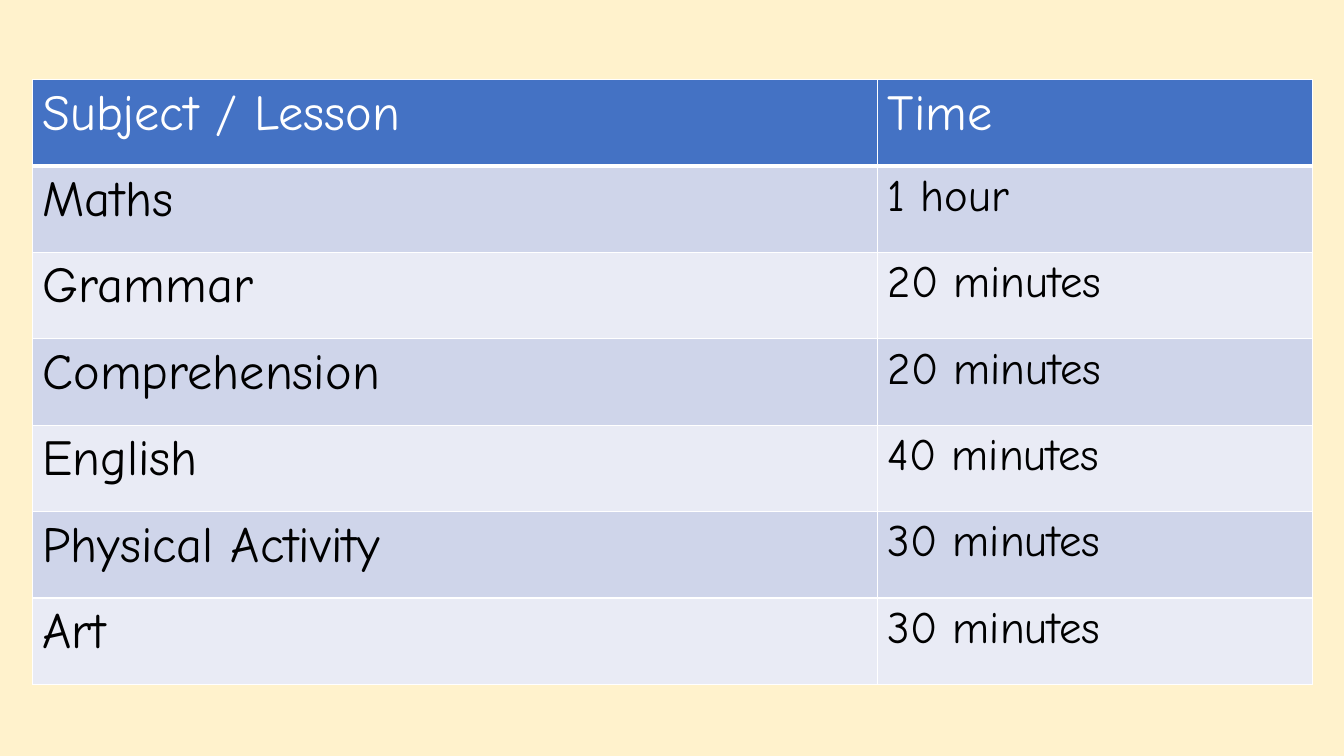
"""Build a timetable slide listing each lesson and its length."""
import pptx
import pptx.dml.color
import pptx.oxml.ns
import pptx.util
from lxml import etree

Pt = pptx.util.Pt
RGBColor = pptx.dml.color.RGBColor

CREAM = RGBColor(0xFF, 0xF2, 0xCC)
BLUE = RGBColor(0x44, 0x72, 0xC4)
DARK_BAND = RGBColor(0xCF, 0xD5, 0xEA)
LIGHT_BAND = RGBColor(0xE9, 0xEB, 0xF5)
WHITE = RGBColor(0xFF, 0xFF, 0xFF)
BLACK = RGBColor(0x00, 0x00, 0x00)

TIMETABLE = [
    ("Subject / Lesson", "Time"),
    ("Maths", "1 hour"),
    ("Grammar", "20 minutes"),
    ("Comprehension", "20 minutes"),
    ("English", "40 minutes"),
    ("Physical Activity", "30 minutes"),
    ("Art", "30 minutes"),
]


class SlideBuilder:
    def __init__(self, slide, font_name):
        self.slide = slide
        self.font_name = font_name

    def background(self, color):
        fill = self.slide.background.fill
        fill.solid()
        fill.fore_color.rgb = color

    def borders(self, cell, color, bottom_width):
        properties = cell._tc.get_or_add_tcPr()
        qualified = pptx.oxml.ns.qn
        for side, width in (("L", 1), ("R", 1), ("T", 1), ("B", bottom_width)):
            line = etree.SubElement(properties, qualified(f"a:ln{side}"), w=str(Pt(width)))
            fill = etree.SubElement(line, qualified("a:solidFill"))
            etree.SubElement(fill, qualified("a:srgbClr"), val=str(color))

    def cell(self, cell, text, size, text_color, fill_color, bottom_width):
        self.borders(cell, WHITE, bottom_width)
        cell.fill.solid()
        cell.fill.fore_color.rgb = fill_color
        cell.text_frame.text = text
        font = cell.text_frame.paragraphs[0].runs[0].font
        font.name = self.font_name
        font.size = Pt(size)
        font.bold = False
        font.color.rgb = text_color

    def table(self, rows, left, top, column_widths, height):
        frame = self.slide.shapes.add_table(
            len(rows), len(column_widths),
            Pt(left), Pt(top), Pt(sum(column_widths)), Pt(height))
        table = frame.table
        for column, width in zip(table.columns, column_widths):
            column.width = Pt(width)
        for row_index, texts in enumerate(rows):
            table.rows[row_index].height = Pt(height / len(rows))
            is_header = row_index == 0
            band = DARK_BAND if row_index % 2 else LIGHT_BAND
            for column_index, text in enumerate(texts):
                self.cell(
                    table.cell(row_index, column_index), text,
                    size=36 if is_header or column_index == 0 else 32,
                    text_color=WHITE if is_header else BLACK,
                    fill_color=BLUE if is_header else band,
                    bottom_width=3 if is_header else 1)


def main():
    presentation = pptx.Presentation()
    presentation.slide_width = Pt(960)
    presentation.slide_height = Pt(540)
    slide = presentation.slides.add_slide(presentation.slide_layouts[6])
    builder = SlideBuilder(slide, "Comic Neue")
    builder.background(CREAM)
    builder.table(TIMETABLE, left=23.2, top=56.9, column_widths=(603.9, 310.4), height=432)
    presentation.save("out.pptx")


if __name__ == "__main__":
    main()
